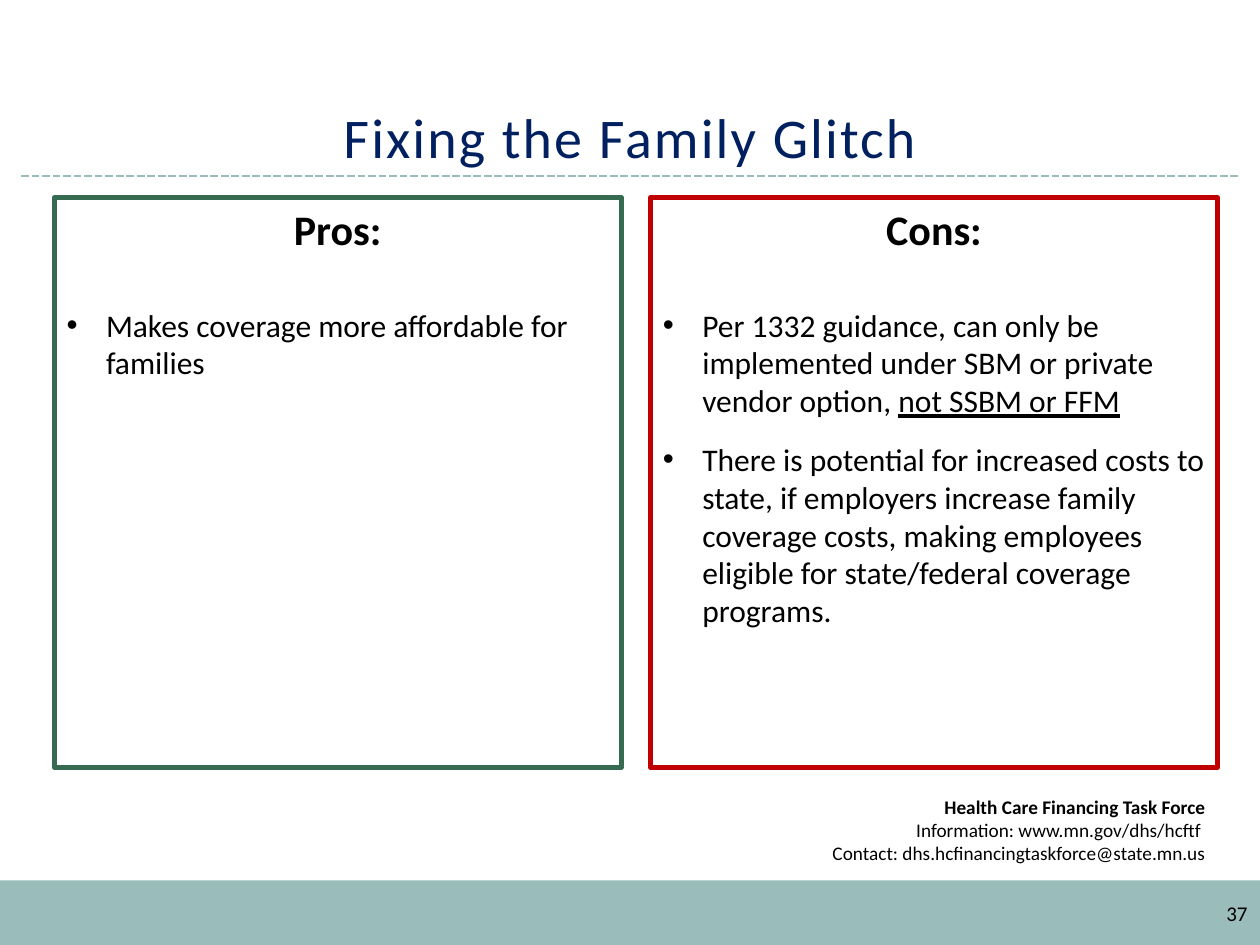
from dataclasses import dataclass

import pptx
import pptx.dml.color
import pptx.enum.dml
import pptx.enum.shapes
import pptx.enum.text
import pptx.oxml
import pptx.oxml.ns
import pptx.util

Pt = pptx.util.Pt
ALIGN = pptx.enum.text.PP_ALIGN
ANCHOR = pptx.enum.text.MSO_ANCHOR

FONT = "Calibri"
COLOURS = {
    "white": "FFFFFF",
    "black": "000000",
    "teal": "9ABCBB",
    "navy": "002060",
    "green": "366A51",
    "red": "C00000",
}
BULLET_INDENT = 22.5
PANEL_LEFT, PANEL_TOP = 31, 113
PANEL_WIDTH, PANEL_HEIGHT = 324, 325.5
PANEL_STEP = 340.75


@dataclass
class Span:
    text: str
    underline: bool = False


@dataclass
class Panel:
    heading: str
    colour: str
    bullets: list[list[Span]]


PANELS = [
    Panel("Pros:", "green", [[Span("Makes coverage more affordable for families")]]),
    Panel("Cons:", "red", [
        [
            Span("Per 1332 guidance, can only be implemented under SBM "
                 "or private vendor option, "),
            Span("not SSBM or FFM", underline=True),
        ],
        [
            Span("There is potential for increased costs to state, if employers "
                 "increase family coverage costs, making employees eligible for "
                 "state/federal coverage programs."),
        ],
    ]),
]


def rgb(name: str) -> pptx.dml.color.RGBColor:
    return pptx.dml.color.RGBColor.from_string(COLOURS[name])


def style(span, size: float, colour: str = "black", bold: bool = False) -> None:
    span.font.name = FONT
    span.font.size = Pt(size)
    span.font.bold = bold
    span.font.color.rgb = rgb(colour)


def add_rectangle(page, left: float, top: float, width: float, height: float,
                  fill: str, outline: str | None = None):
    box = page.shapes.add_shape(pptx.enum.shapes.MSO_SHAPE.RECTANGLE,
                                Pt(left), Pt(top), Pt(width), Pt(height))
    box.shadow.inherit = False
    box.fill.solid()
    box.fill.fore_color.rgb = rgb(fill)
    if outline:
        box.line.color.rgb = rgb(outline)
        box.line.width = Pt(3)
    else:
        box.line.fill.background()
    box.text_frame.word_wrap = True
    box.text_frame.vertical_anchor = ANCHOR.TOP
    return box


def add_label(page, left: float, top: float, width: float, height: float,
              text: str, size: float, colour: str, align, anchor):
    box = page.shapes.add_textbox(Pt(left), Pt(top), Pt(width), Pt(height))
    frame = box.text_frame
    frame.word_wrap = True
    frame.vertical_anchor = anchor
    frame.text = text
    para = frame.paragraphs[0]
    para.alignment = align
    style(para.runs[0], size, colour)
    return para


def add_divider(page) -> None:
    line = page.shapes.add_connector(pptx.enum.shapes.MSO_CONNECTOR.STRAIGHT,
                                     Pt(12), Pt(100.5), Pt(708), Pt(100.5))
    line.line.color.rgb = rgb("teal")
    line.line.width = Pt(1.5)
    line.line.dash_style = pptx.enum.dml.MSO_LINE.SQUARE_DOT
    properties = line._element.spPr
    properties.append(pptx.oxml.parse_xml(
        f"<a:effectLst {pptx.oxml.ns.nsdecls('a')}/>"))


def add_contact(page) -> None:
    frame = add_rectangle(page, 327, 450.75, 369, 48, "white").text_frame
    frame.text = ("Health Care Financing Task Force\v"
                  "Information: www.mn.gov/dhs/hcftf \n"
                  "Contact: dhs.hcfinancingtaskforce@state.mn.us")
    for para in frame.paragraphs:
        para.alignment = ALIGN.RIGHT
        for span in para.runs:
            style(span, 11)
    frame.paragraphs[0].runs[0].font.bold = True


def add_bullet(frame, spans: list[Span]) -> None:
    para = frame.add_paragraph()
    properties = para._p.get_or_add_pPr()
    properties.set("marL", str(Pt(BULLET_INDENT)))
    properties.set("indent", str(-Pt(BULLET_INDENT)))
    for tag in ('<a:buFont {} typeface="Arial"/>', '<a:buChar {} char="•"/>'):
        properties.append(pptx.oxml.parse_xml(
            tag.format(pptx.oxml.ns.nsdecls("a"))))
    para.alignment = ALIGN.LEFT
    para.space_after = Pt(12)
    for item in spans:
        span = para.add_run()
        span.text = item.text
        style(span, 18)
        span.font.underline = item.underline


def add_panel(page, panel: Panel, left: float) -> None:
    frame = add_rectangle(page, left, PANEL_TOP, PANEL_WIDTH, PANEL_HEIGHT,
                          "white", panel.colour).text_frame
    frame.text = panel.heading
    heading = frame.paragraphs[0]
    heading.alignment = ALIGN.CENTER
    heading.space_after = Pt(29.3)
    style(heading.runs[0], 24, bold=True)
    for spans in panel.bullets:
        add_bullet(frame, spans)


def main() -> None:
    deck = pptx.Presentation()
    deck.slide_width, deck.slide_height = Pt(720), Pt(540)
    page = deck.slides.add_slide(deck.slide_layouts[6])

    add_rectangle(page, 0, 503, 720, 37, "teal")
    add_divider(page)
    add_contact(page)

    title = add_label(page, 24, 18, 672, 82.5, "Fixing the Family Glitch",
                      32, "navy", ALIGN.CENTER, ANCHOR.BOTTOM)
    title.line_spacing = Pt(40)
    title.runs[0]._r.get_or_add_rPr().set("spc", "120")

    for index, panel in enumerate(PANELS):
        add_panel(page, panel, PANEL_LEFT + index * PANEL_STEP)

    add_label(page, 552, 511, 168, 29, "37", 12, "black", ALIGN.RIGHT, ANCHOR.TOP)
    deck.save("out.pptx")


if __name__ == "__main__":
    main()
